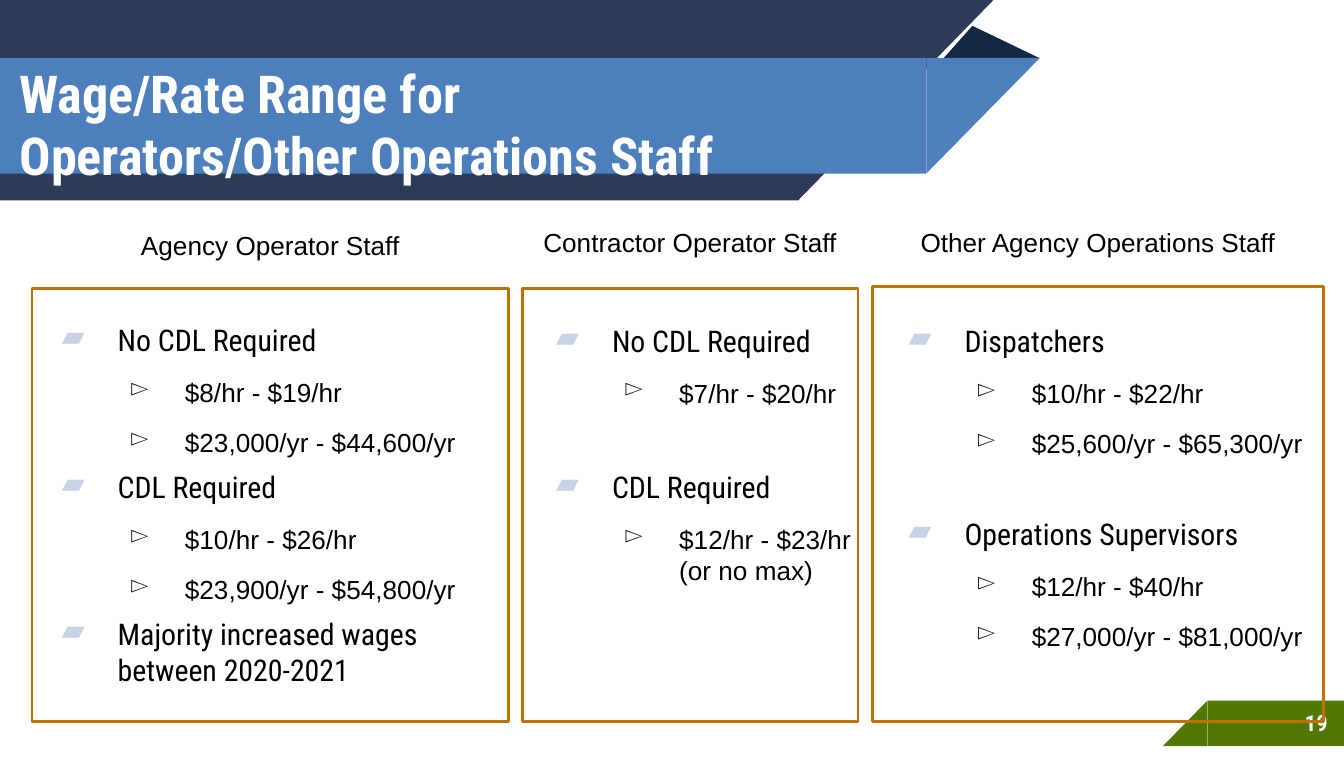
from lxml import etree
from pptx import Presentation
from pptx.dml.color import RGBColor
from pptx.enum.shapes import MSO_SHAPE
from pptx.enum.text import MSO_ANCHOR, PP_ALIGN
from pptx.oxml.ns import qn
from pptx.util import Inches, Pt

RECT, TRIANGLE = MSO_SHAPE.RECTANGLE, MSO_SHAPE.ISOSCELES_TRIANGLE
RIGHT_TRIANGLE = MSO_SHAPE.RIGHT_TRIANGLE
TOP, MIDDLE = MSO_ANCHOR.TOP, MSO_ANCHOR.MIDDLE
LEFT, CENTER, RIGHT = PP_ALIGN.LEFT, PP_ALIGN.CENTER, PP_ALIGN.RIGHT

NAVY = RGBColor(0x2C, 0x3B, 0x56)
DARK_NAVY = RGBColor(0x15, 0x28, 0x43)
BLUE = RGBColor(0x4C, 0x7F, 0xBB)
PALE_BLUE = RGBColor(0xC7, 0xD3, 0xE6)
GREEN = RGBColor(0x51, 0x78, 0x05)
ORANGE = RGBColor(0xBF, 0x72, 0x00)
WHITE = RGBColor(0xFF, 0xFF, 0xFF)
BLACK = RGBColor(0, 0, 0)

HEAD_FONT, BODY_FONT = "Roboto Condensed", "Arial"

LEVELS = [
    {"char": "▰", "color": PALE_BLUE, "indent": 0.65, "before": 7.8, "size": 20.8, "font": HEAD_FONT},
    {"char": "▻", "color": BLACK, "indent": 1.3, "before": 13, "size": 18.2, "font": BODY_FONT},
]

AGENCY = [
    ("No CDL Required", ["$8/hr - $19/hr", "$23,000/yr - $44,600/yr"]),
    ("CDL Required", ["$10/hr - $26/hr", "$23,900/yr - $54,800/yr"]),
    ("Majority increased wages between 2020-2021", []),
]
CONTRACTOR = [
    ("No CDL Required", ["$7/hr - $20/hr"]),
    ("CDL Required", ["$12/hr - $23/hr (or no max)"]),
]
OTHER = [
    ("Dispatchers", ["$10/hr - $22/hr", "$25,600/yr - $65,300/yr"]),
    ("Operations Supervisors", ["$12/hr - $40/hr", "$27,000/yr - $81,000/yr"]),
]

COLUMNS = [
    {"heading": "Agency Operator Staff", "heading_at": (0.31, 2.17, 4.61, 0.41),
     "frame_at": (0.31, 2.79, 4.61, 4.19), "list_at": (0.39, 2.79, 4.29, 4.19),
     "inset": 0.1, "groups": AGENCY, "group_gap": 7.8},
    {"heading": "Contractor Operator Staff", "heading_at": (5.05, 2.14, 3.25, 0.41),
     "frame_at": (5.05, 2.79, 3.25, 4.19), "list_at": (5.14, 2.77, 3.24, 3.25),
     "inset": 0.13, "groups": CONTRACTOR, "group_gap": 42},
    {"heading": "Other Agency Operations Staff", "heading_at": (8.44, 2.14, 4.36, 0.41),
     "frame_at": (8.44, 2.77, 4.36, 4.21), "list_at": (8.55, 3.22, 4.25, 2.99),
     "inset": 0.13, "groups": OTHER, "group_gap": 40},
]


def add_shape(slide, kind, at, fill=None, line=None):
    s = slide.shapes.add_shape(kind, *map(Inches, at))
    s.shadow.inherit = False
    if fill is None:
        s.fill.background()
    else:
        s.fill.solid()
        s.fill.fore_color.rgb = fill
    if line is None:
        s.line.fill.background()
    else:
        s.line.color.rgb = line
        s.line.width = Pt(2)
    return s


def add_left_band(slide, top, height, width, slant, color):
    add_shape(slide, RECT, (0, top, width, height), color)
    s = add_shape(slide, RIGHT_TRIANGLE, (width, top, slant, height), color)
    s._element.spPr.xfrm.set("flipV", "1")


def add_corner_tab(slide):
    add_shape(slide, RECT, (11.68, 6.78, 1.32, 0.44), GREEN)
    s = add_shape(slide, RIGHT_TRIANGLE, (11.25, 6.78, 0.43, 0.44), GREEN)
    s._element.spPr.xfrm.set("flipH", "1")


def add_frame(slide, at, anchor, inset_x, inset_y):
    tf = slide.shapes.add_textbox(*map(Inches, at)).text_frame
    tf.word_wrap = True
    tf.vertical_anchor = anchor
    tf.margin_left = tf.margin_right = Inches(inset_x)
    tf.margin_top = tf.margin_bottom = Inches(inset_y)
    return tf


def format_runs(p, size, font, color, bold=False):
    for r in p.runs:
        r.font.size = Pt(size)
        r.font.name = font
        r.font.color.rgb = color
        r.font.bold = bold


def add_label(slide, at, text, size, font, color, align, anchor=MIDDLE, inset_y=0.1, bold=False):
    tf = add_frame(slide, at, anchor, 0.1, inset_y)
    tf.text = text
    p = tf.paragraphs[0]
    p.alignment = align
    format_runs(p, size, font, color, bold)


def set_bullet(p, level):
    pPr = p._p.get_or_add_pPr()
    pPr.set("marL", str(Inches(level["indent"])))
    pPr.set("indent", str(-Inches(0.54)))
    color = etree.SubElement(pPr, qn("a:buClr"))
    etree.SubElement(color, qn("a:srgbClr"), val=str(level["color"]))
    etree.SubElement(pPr, qn("a:buChar"), char=level["char"])


def add_bullet_list(slide, column):
    inset = column["inset"]
    tf = add_frame(slide, column["list_at"], MIDDLE, inset, inset)
    items = []
    for title, rates in column["groups"]:
        items.append((0, title, column["group_gap"]))
        items += [(1, rate, LEVELS[1]["before"]) for rate in rates]
    for i, (depth, text, before) in enumerate(items):
        level = LEVELS[depth]
        p = tf.add_paragraph() if i else tf.paragraphs[0]
        p.text = text
        p.level = depth
        set_bullet(p, level)
        p.space_before = Pt(before if i else 0)
        format_runs(p, level["size"], level["font"], BLACK)


def add_column(slide, column):
    add_label(slide, column["heading_at"], column["heading"], 18.2, BODY_FONT, BLACK, CENTER, TOP, 0.05)
    add_bullet_list(slide, column)
    add_shape(slide, RECT, column["frame_at"], line=ORANGE)


def main():
    prs = Presentation()
    prs.slide_width, prs.slide_height = Inches(13), Inches(7.5)
    slide = prs.slides.add_slide(prs.slide_layouts[6])

    add_left_band(slide, 0, 1.94, 7.72, 1.89, NAVY)
    add_corner_tab(slide)
    s = add_shape(slide, TRIANGLE, (9.13, 0.25, 0.92, 0.31), DARK_NAVY)
    s.adjustments[0] = 0.3
    add_left_band(slide, 0.56, 1.12, 8.96, 1.1, BLUE)

    add_label(slide, (0.09, 0.65, 8.88, 1.09), "Wage/Rate Range for\vOperators/Other Operations Staff",
              36.4, HEAD_FONT, WHITE, LEFT, bold=True)
    add_label(slide, (10.83, 6.76, 2.11, 0.46), "19", 15.6, HEAD_FONT, WHITE, RIGHT, bold=True)
    for column in COLUMNS:
        add_column(slide, column)

    prs.save("out.pptx")


if __name__ == "__main__":
    main()
